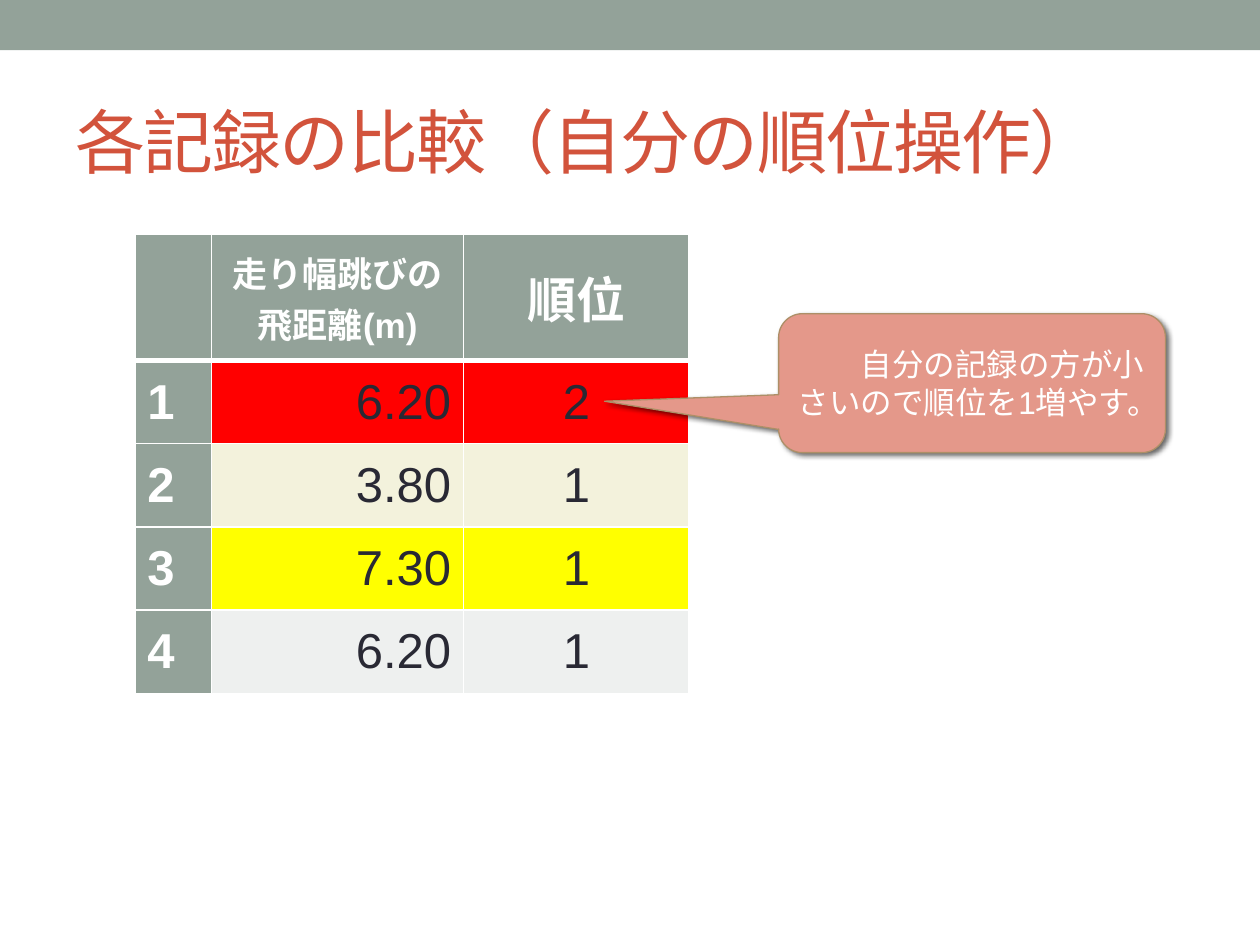
from lxml.etree import SubElement
from pptx import Presentation
from pptx.dml.color import RGBColor
from pptx.enum.shapes import MSO_SHAPE
from pptx.enum.text import MSO_ANCHOR, PP_ALIGN
from pptx.oxml import parse_xml
from pptx.oxml.ns import nsdecls, qn
from pptx.util import Inches, Pt

WIDE, HIGH = 10, 7.5
INK = {
    "sage": "93A299", "white": "FFFFFF", "rust": "D2533C", "dark": "292934",
    "red": "FF0000", "cream": "F3F2DC", "yellow": "FFFF00", "mist": "EEF0EF",
    "rose": "E4988A", "tan": "AD8F67", "black": "000000",
}
COLS = (0.61, 2, 1.79)
ROWS = (1, 0.66, 0.66, 0.66, 0.66)
HEAD = (("", 20), ("走り幅跳びの\n飛距離(m)", 20), ("順位", 28))
DATA = (
    ("1", "6.20", "2", "red"),
    ("2", "3.80", "1", "cream"),
    ("3", "7.30", "1", "yellow"),
    ("4", "6.20", "1", "mist"),
)
SIDES = (PP_ALIGN.LEFT, PP_ALIGN.RIGHT, PP_ALIGN.CENTER)


def share(x, y, w, h):
    return [Inches(n) for n in (x * WIDE, y * HIGH, w * WIDE, h * HIGH)]


def tint(name):
    return RGBColor.from_string(INK[name])


def paint(item, name):
    item.fill.solid()
    item.fill.fore_color.rgb = tint(name)


def write(frame, text, size, color, align=PP_ALIGN.LEFT, bold=False):
    frame.text = text
    for para in frame.paragraphs:
        para.alignment = align
        font = para.font
        font.name, font.size, font.bold = "Arial", Pt(size), bold
        font.color.rgb = tint(color)


def edge(cell, top, base):
    props = cell._tc.get_or_add_tcPr()
    for spot, (side, width) in enumerate(zip("LRTB", (1, 1, top, base))):
        props.insert(spot, parse_xml(
            f'<a:ln{side} {nsdecls("a")} w="{Pt(width)}"><a:solidFill>'
            f'<a:srgbClr val="{INK["white"]}"/></a:solidFill></a:ln{side}>'))


def band(slide, box):
    bar = slide.shapes.add_shape(MSO_SHAPE.RECTANGLE, *box)
    bar.shadow.inherit = False
    paint(bar, "sage")
    bar.line.fill.background()


def title(slide, box):
    frame = slide.shapes.add_textbox(*box).text_frame
    frame.word_wrap = True
    frame.vertical_anchor = MSO_ANCHOR.MIDDLE
    write(frame, "各記録の比較（自分の順位操作）", 40, "rust")
    for run in frame.paragraphs[0].runs:
        run._r.get_or_add_rPr().set("spc", "-100")


def ranks(slide, box):
    left, top, width, height = box
    grid = slide.shapes.add_table(len(ROWS), len(COLS), *box).table
    for col, part in zip(grid.columns, COLS):
        col.width = int(width * part / sum(COLS))
    for row, part in zip(grid.rows, ROWS):
        row.height = int(height * part / sum(ROWS))
    for c, (text, size) in enumerate(HEAD):
        cell = grid.cell(0, c)
        write(cell.text_frame, text, size, "white", PP_ALIGN.CENTER, True)
        paint(cell, "sage")
        edge(cell, 1, 3)
    for r, (*texts, fill) in enumerate(DATA, 1):
        for c, text in enumerate(texts):
            cell = grid.cell(r, c)
            label = c == 0
            write(cell.text_frame, text, 28, "white" if label else "dark",
                  SIDES[c], label)
            paint(cell, "sage" if label else fill)
            edge(cell, 3 if r == 1 else 1, 1)
    for cell in grid.iter_cells():
        cell.vertical_anchor = MSO_ANCHOR.MIDDLE


def shade(shape):
    shape.shadow.inherit = False
    glow = shape._element.spPr.find(qn("a:effectLst"))
    drop = SubElement(glow, qn("a:outerShdw"), blurRad=str(Pt(3)),
                      dist=str(Pt(2)), dir="2700000", rotWithShape="0")
    color = SubElement(drop, qn("a:srgbClr"), val=INK["black"])
    SubElement(color, qn("a:alpha"), val="60000")


def note(slide, box):
    call = slide.shapes.add_shape(MSO_SHAPE.ROUNDED_RECTANGULAR_CALLOUT, *box)
    for spot, value in enumerate((-0.95, 0.13, 0.17)):
        call.adjustments[spot] = value
    paint(call, "rose")
    call.line.color.rgb = tint("tan")
    call.line.width = Pt(0.75)
    shade(call)
    frame = call.text_frame
    frame.word_wrap = True
    frame.vertical_anchor = MSO_ANCHOR.MIDDLE
    write(frame, "　　自分の記録の方が小さいので順位を1増やす。", 18, "white")


def main():
    deck = Presentation()
    deck.slide_width, deck.slide_height = Inches(WIDE), Inches(HIGH)
    slide = deck.slides.add_slide(deck.slide_layouts[6])
    band(slide, share(0, 0, 1, 0.053))
    ranks(slide, share(0.107, 0.248, 0.44, 0.486))
    note(slide, share(0.618, 0.332, 0.307, 0.147))
    title(slide, share(0.05, 0.077, 0.9, 0.144))
    deck.save("out.pptx")


if __name__ == "__main__":
    main()
